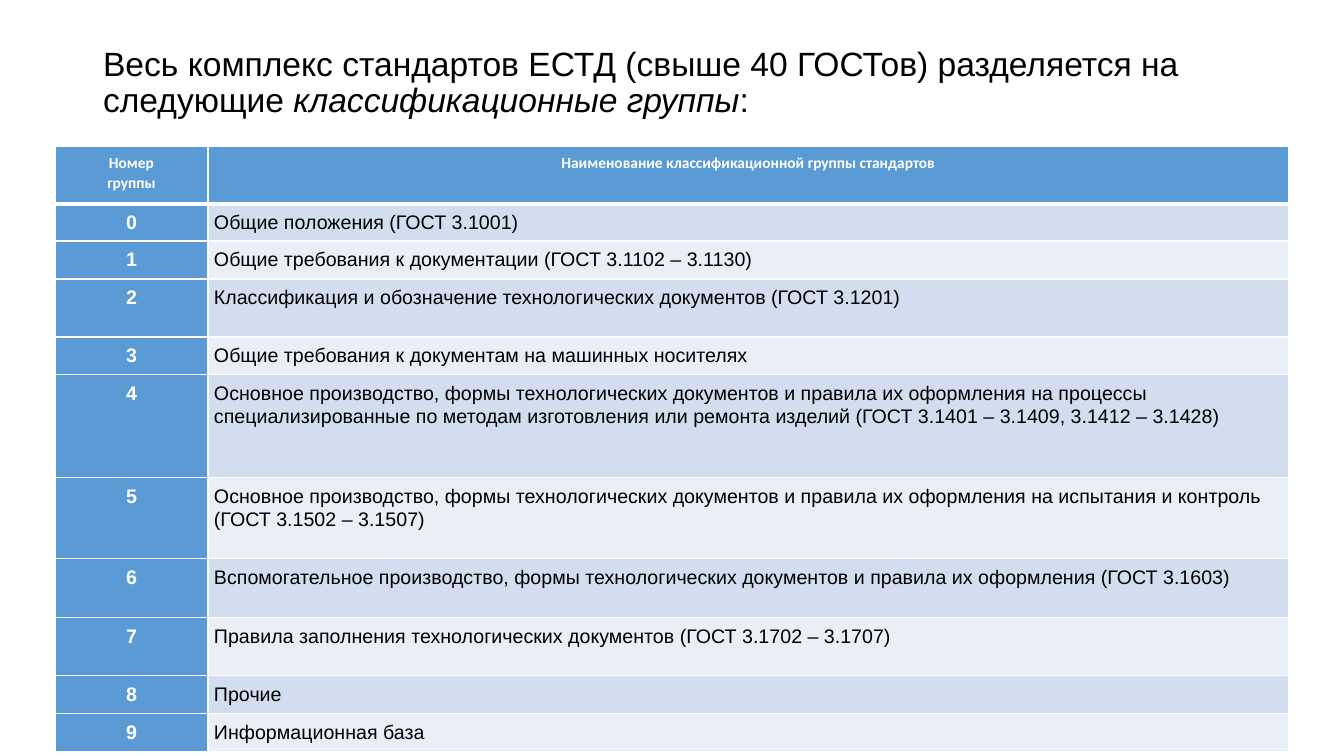
"""Build the slide listing the classification groups of the ЕСТД standards."""
from lxml import etree
from pptx import Presentation
from pptx import util as u
from pptx.dml.color import RGBColor
from pptx.enum import text
from pptx.oxml import ns

EMU_PER_PX = 914400 / 100.8
BLACK = RGBColor(0x00, 0x00, 0x00)
WHITE = RGBColor(0xFF, 0xFF, 0xFF)
BLUE = RGBColor(0x5B, 0x9B, 0xD5)
BANDS = (RGBColor(0xD2, 0xDE, 0xEF), RGBColor(0xEA, 0xEF, 0xF7))

TITLE = (
    ("Весь комплекс стандартов ЕСТД (свыше 40 ГОСТов) разделяется на следующие ", False),
    ("классификационные группы", True),
    (":", False),
)
HEADER = ("Номер\nгруппы", "Наименование классификационной группы стандартов")
HEADER_HEIGHT = 58
COLUMN_WIDTHS = (153, 1081)
GROUPS = (
    ("Общие положения (ГОСТ 3.1001)", 37),
    ("Общие требования к документации (ГОСТ 3.1102 – 3.1130)", 38),
    ("Классификация и обозначение технологических документов (ГОСТ 3.1201)", 58),
    ("Общие требования к документам на машинных носителях", 38),
    ("Основное производство, формы технологических документов и правила их "
     "оформления на процессы специализированные по методам изготовления или "
     "ремонта изделий (ГОСТ 3.1401 – 3.1409, 3.1412 – 3.1428)", 103),
    ("Основное производство, формы технологических документов и правила их "
     "оформления на испытания и контроль (ГОСТ 3.1502 – 3.1507)", 81),
    ("Вспомогательное производство, формы технологических документов и правила "
     "их оформления (ГОСТ 3.1603)", 59),
    ("Правила заполнения технологических документов (ГОСТ 3.1702 – 3.1707)", 58),
    ("Прочие", 38),
    ("Информационная база", 38),
)


def px(length):
    """Convert pixels to EMU."""
    return u.Emu(round(length * EMU_PER_PX))


def style_font(font, name, size, color, bold=False, italic=False):
    """Set the look of a run's font."""
    font.name, font.size = name, u.Pt(size)
    font.bold, font.italic = bold, italic
    font.color.rgb = color


def set_borders(cell, top=1, bottom=1):
    """Give a cell white borders, with widths in points."""
    properties = cell._tc.get_or_add_tcPr()
    for side, width in (("L", 1), ("R", 1), ("T", top), ("B", bottom)):
        line = etree.SubElement(properties, ns.qn(f"a:ln{side}"), w=str(u.Pt(width)))
        fill = etree.SubElement(line, ns.qn("a:solidFill"))
        etree.SubElement(fill, ns.qn("a:srgbClr"), val=str(WHITE))


def fill_cell(cell, wording, fill, font, align, **borders):
    """Write a cell with its fill, borders and font settings."""
    set_borders(cell, **borders)
    cell.fill.solid()
    cell.fill.fore_color.rgb = fill
    cell.margin_left = cell.margin_right = px(6)
    cell.margin_top = cell.margin_bottom = px(6)
    cell.text_frame.text = wording
    for paragraph in cell.text_frame.paragraphs:
        paragraph.alignment = align
        paragraph.line_spacing = 1.07
        for run in paragraph.runs:
            style_font(run.font, *font)


def add_title(slide):
    """Place and write the title."""
    title = slide.shapes.title
    title.left, title.top, title.width, title.height = map(px, (93, 40, 1159, 87))
    frame = title.text_frame
    frame.auto_size = text.MSO_AUTO_SIZE.NONE
    frame.vertical_anchor = text.MSO_ANCHOR.MIDDLE
    paragraph = frame.paragraphs[0]
    paragraph.alignment = text.PP_ALIGN.LEFT
    paragraph.line_spacing = 0.9
    for wording, italic in TITLE:
        run = paragraph.add_run()
        run.text = wording
        style_font(run.font, "Arial", 24, BLACK, italic=italic)


def add_groups_table(slide):
    """Add the table of group numbers and names."""
    heights = [HEADER_HEIGHT] + [height for _, height in GROUPS]
    table = slide.shapes.add_table(
        len(heights), len(COLUMN_WIDTHS), px(55), px(146),
        px(sum(COLUMN_WIDTHS)), px(sum(heights))).table
    for column, width in zip(table.columns, COLUMN_WIDTHS):
        column.width = px(width)
    for row, height in zip(table.rows, heights):
        row.height = px(height)

    center, left = text.PP_ALIGN.CENTER, text.PP_ALIGN.LEFT
    for index, heading in enumerate(HEADER):
        fill_cell(table.cell(0, index), heading, BLUE,
                  ("Calibri", 11, WHITE, True), center, bottom=3)
    for number, (name, _) in enumerate(GROUPS):
        top = 3 if number == 0 else 1
        fill_cell(table.cell(number + 1, 0), str(number), BLUE,
                  ("Arial", 14, WHITE, True), center, top=top)
        fill_cell(table.cell(number + 1, 1), name, BANDS[number % 2],
                  ("Arial", 14, BLACK), left, top=top)


def main():
    """Build and save the slide."""
    deck = Presentation()
    deck.slide_width, deck.slide_height = px(1344), px(756)
    slide = deck.slides.add_slide(deck.slide_layouts.get_by_name("Title Only"))
    add_title(slide)
    add_groups_table(slide)
    deck.save("out.pptx")


if __name__ == "__main__":
    main()
